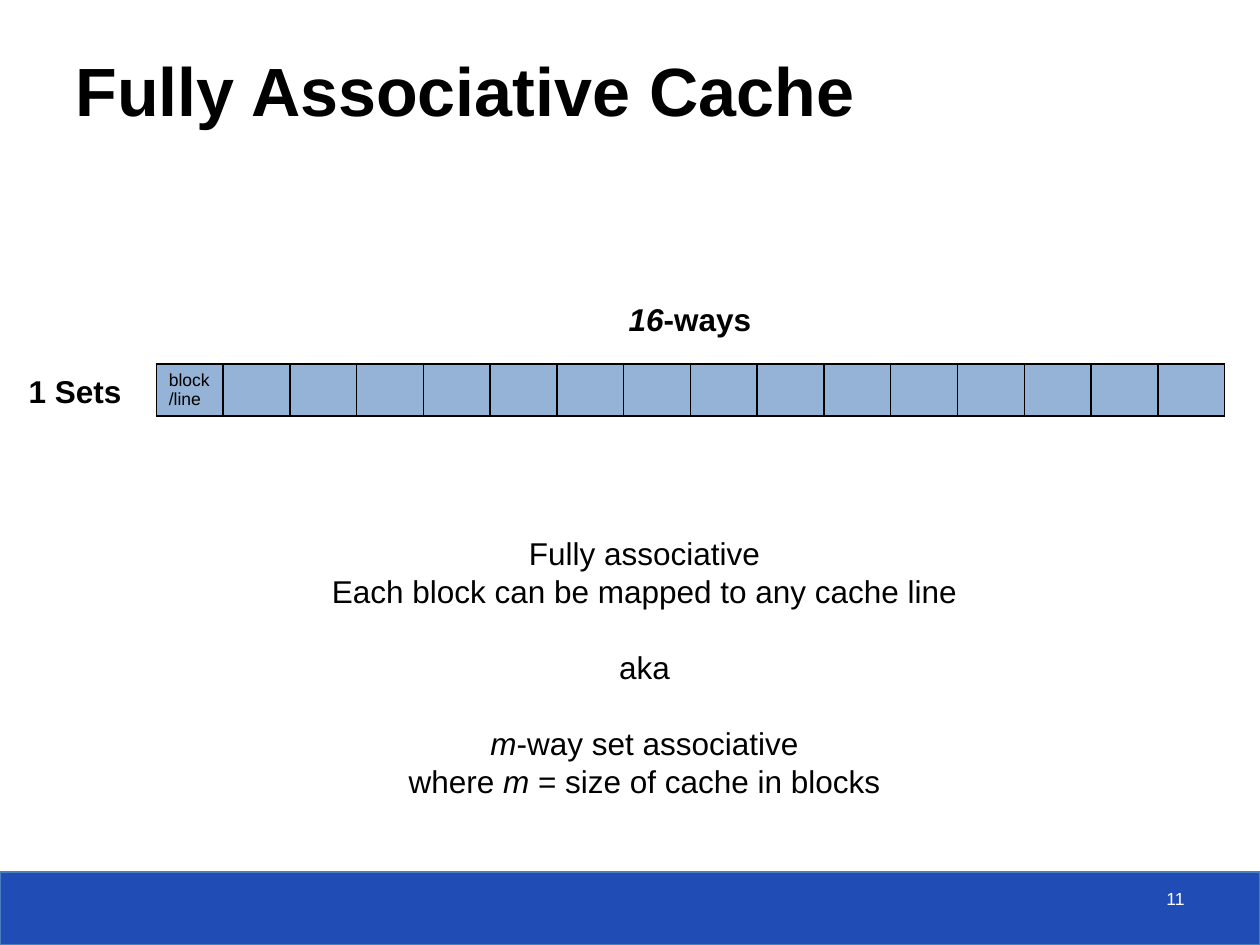
from dataclasses import dataclass

from lxml.etree import SubElement
from pptx import Presentation
from pptx.dml.color import RGBColor
from pptx.enum.shapes import MSO_SHAPE
from pptx.enum.text import MSO_ANCHOR, MSO_AUTO_SIZE, PP_ALIGN
from pptx.oxml.ns import qn
from pptx.util import Inches, Pt


@dataclass(frozen=True)
class Theme:
    font: str = "Arial"
    black: str = "000000"
    white: str = "FFFFFF"
    band: str = "204DB5"
    band_line: str = "4B7EBC"
    block: str = "95B3D7"
    title_size: float = 39
    text_size: float = 18
    small_size: float = 10
    line_height: float = 21.7


@dataclass(frozen=True)
class Span:
    text: str
    italic: bool = False


@dataclass(frozen=True)
class Line:
    spans: tuple[Span, ...]
    space_before: float = 0


@dataclass(frozen=True)
class Label:
    left: float
    top: float
    width: float
    height: float
    lines: tuple[Line, ...]
    size: float = Theme.text_size
    color: str = Theme.black
    bold: bool = False
    align: PP_ALIGN = PP_ALIGN.CENTER
    wrap: bool = False
    line_height: float | None = Theme.line_height


THEME = Theme()
WAYS = 16
LABELS = (
    Label(7.17, 7, 2.33, 0.33, (Line((Span("11"),)),), size=THEME.small_size,
          color=THEME.white, align=PP_ALIGN.RIGHT, wrap=True, line_height=None),
    Label(0.12, 2.9, 0.95, 0.4, (Line((Span("1 Sets"),)),), bold=True),
    Label(4.89, 2.33, 1.18, 0.4, (Line((Span("16", True), Span("-ways"))),),
          bold=True, align=PP_ALIGN.LEFT),
    Label(2.51, 4.19, 5.21, 2.52, (
        Line((Span("Fully associative"),)),
        Line((Span("Each block can be mapped to any cache line"),)),
        Line((Span("aka"),), THEME.line_height),
        Line((Span("m", True), Span("-way set associative")), THEME.line_height),
        Line((Span("where "), Span("m", True), Span(" = size of cache in blocks"))),
    )),
)


def write(text_frame, lines, *, size, color=THEME.black, bold=False,
          align=PP_ALIGN.LEFT, line_height=None):
    for index, line in enumerate(lines):
        paragraph = text_frame.paragraphs[0] if index == 0 else text_frame.add_paragraph()
        paragraph.alignment = align
        paragraph.space_before = Pt(line.space_before)
        if line_height:
            paragraph.line_spacing = Pt(line_height)
        for span in line.spans:
            run = paragraph.add_run()
            run.text = span.text
            run.font.name = THEME.font
            run.font.size = Pt(size)
            run.font.bold = bold
            run.font.italic = span.italic
            run.font.color.rgb = RGBColor.from_string(color)


def add_label(slide, label: Label) -> None:
    shape = slide.shapes.add_textbox(Inches(label.left), Inches(label.top),
                                     Inches(label.width), Inches(label.height))
    shape.text_frame.word_wrap = label.wrap
    write(shape.text_frame, label.lines, size=label.size, color=label.color,
          bold=label.bold, align=label.align, line_height=label.line_height)


def add_band(slide) -> None:
    shape = slide.shapes.add_shape(MSO_SHAPE.RECTANGLE, Inches(0), Inches(6.92),
                                   Inches(10), Inches(0.58))
    shape.shadow.inherit = False
    shape.fill.solid()
    shape.fill.fore_color.rgb = RGBColor.from_string(THEME.band)
    shape.line.color.rgb = RGBColor.from_string(THEME.band_line)
    shape.line.width = Pt(0.75)


def set_title(slide) -> None:
    shape = slide.shapes.title
    shape.left, shape.top = Inches(0.5), Inches(0.25)
    shape.width, shape.height = Inches(9.22), Inches(0.83)
    shape.fill.solid()
    shape.fill.fore_color.rgb = RGBColor.from_string(THEME.white)
    color = shape.fill._xPr.find(qn("a:solidFill"))[0]
    SubElement(color, qn("a:alpha"), val="75000")
    shape.text_frame.auto_size = MSO_AUTO_SIZE.NONE
    shape.text_frame.vertical_anchor = MSO_ANCHOR.BOTTOM
    write(shape.text_frame, (Line((Span("Fully Associative Cache"),)),),
          size=THEME.title_size, bold=True)


def set_borders(cell) -> None:
    properties = cell._tc.get_or_add_tcPr()
    for position, side in enumerate(("lnL", "lnR", "lnT", "lnB")):
        border = SubElement(properties, qn(f"a:{side}"), w=str(Pt(1)))
        fill = SubElement(border, qn("a:solidFill"))
        SubElement(fill, qn("a:srgbClr"), val=THEME.black)
        properties.insert(position, border)


def add_cache(slide) -> None:
    table = slide.shapes.add_table(1, WAYS, Inches(1.24), Inches(2.89),
                                   Inches(8.48), Inches(0.41)).table
    table.first_row = False
    table.horz_banding = False
    for cell in table.iter_cells():
        cell.fill.solid()
        cell.fill.fore_color.rgb = RGBColor.from_string(THEME.block)
        set_borders(cell)
    write(table.cell(0, 0).text_frame,
          (Line((Span("block"),)), Line((Span("/line"),))), size=THEME.small_size)


def main() -> None:
    presentation = Presentation()
    presentation.slide_width = Inches(10)
    presentation.slide_height = Inches(7.5)
    slide = presentation.slides.add_slide(presentation.slide_layouts[5])
    add_band(slide)
    set_title(slide)
    add_cache(slide)
    for label in LABELS:
        add_label(slide, label)
    presentation.save("out.pptx")


if __name__ == "__main__":
    main()
